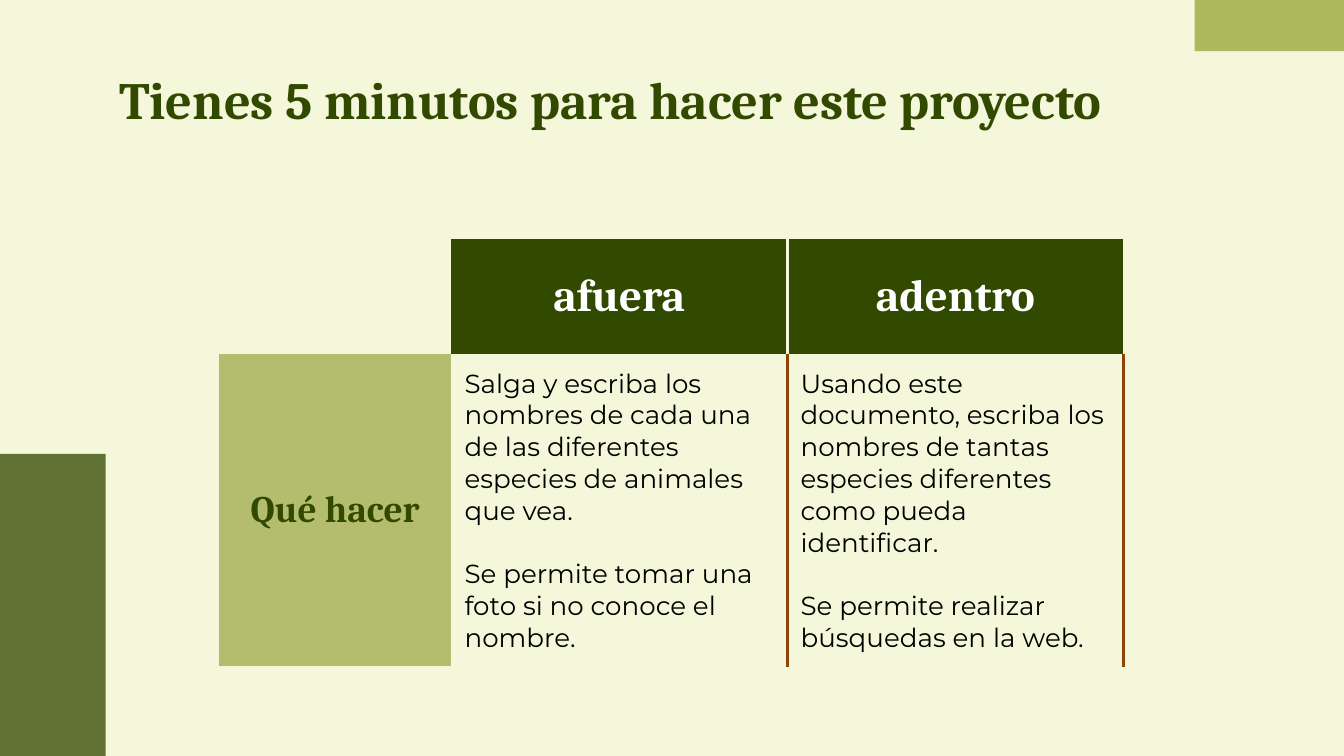
from lxml import etree
from pptx import Presentation
from pptx.dml.color import RGBColor
from pptx.enum import shapes, text
from pptx.oxml import ns
from pptx.util import Cm, Pt

CREAM, DARK, OLIVE, PALE, BROWN = "F4F7DA", "324A00", "7C8C03", "B4BD6E", "8C4303"
HEADING, BODY = "Cambria", "Montserrat"
NO_STYLE = "{2D5ABB26-0587-4C30-8999-92F81FD0307C}"


def paint(target, color):
    """Give a fill or a font colour its hex value."""
    if hasattr(target, "solid"):
        target.solid()
        target = target.fore_color
    target.rgb = RGBColor.from_string(color)


def set_font(paragraph, name, size, color, bold):
    font = paragraph.font
    font.name, font.size, font.bold = name, Pt(size), bold
    paint(font.color, color)


def add_block(slide, box, color, opacity):
    block = slide.shapes.add_shape(shapes.MSO_SHAPE.RECTANGLE, *map(Cm, box))
    block.shadow.inherit = False
    block.line.fill.background()
    paint(block.fill, color)
    fill_color = block.fill._xPr.find(".//" + ns.qn("a:srgbClr"))
    etree.SubElement(fill_color, ns.qn("a:alpha"), val=str(opacity * 1000))


def add_title(slide, box, wording):
    title = slide.shapes.title
    title.left, title.top, title.width, title.height = map(Cm, box)
    frame = title.text_frame
    frame.margin_left = frame.margin_right = frame.margin_top = frame.margin_bottom = Cm(0.25)
    frame.vertical_anchor = text.MSO_ANCHOR.TOP
    frame.auto_size = text.MSO_AUTO_SIZE.NONE
    frame.text = wording
    heading = frame.paragraphs[0]
    heading.alignment = text.PP_ALIGN.LEFT
    set_font(heading, HEADING, 28, DARK, True)


def add_borders(cell, borders):
    """Draw the sides named in borders, in schema order, and hide the others."""
    props = cell._tc.get_or_add_tcPr()
    for side in "LRTB":
        line = etree.SubElement(props, ns.qn(f"a:ln{side}"), w=str(Pt(1.5)))
        if side in borders:
            fill = etree.SubElement(line, ns.qn("a:solidFill"))
            etree.SubElement(fill, ns.qn("a:srgbClr"), val=borders[side])
        else:
            etree.SubElement(line, ns.qn("a:noFill"))


def fill_cell(cell, wording, font, fill=None, borders=(), centered=True):
    cell.margin_left = cell.margin_right = cell.margin_top = cell.margin_bottom = Cm(0.25)
    cell.vertical_anchor = text.MSO_ANCHOR.MIDDLE
    add_borders(cell, borders)
    if fill:
        paint(cell.fill, fill)
    else:
        cell.fill.background()
    cell.text = wording
    for index, paragraph in enumerate(cell.text_frame.paragraphs):
        paragraph.alignment = text.PP_ALIGN.CENTER if centered else text.PP_ALIGN.LEFT
        if index:
            paragraph.space_before = Pt(17)
        set_font(paragraph, *font)


def add_instructions(slide, box, row_label, columns):
    table = slide.shapes.add_table(2, 3, *map(Cm, box)).table
    table.first_row = table.horz_banding = False
    table._tbl.tblPr.find(ns.qn("a:tableStyleId")).text = NO_STYLE
    for column, width in zip(table.columns, (4.39, 6.35, 6.35)):
        column.width = Cm(width)
    for row, height in zip(table.rows, (2.18, box[3] - 2.18)):
        row.height = Cm(height)

    # Row label
    fill_cell(table.cell(0, 0), "", (BODY, 14, "000000", False))
    fill_cell(table.cell(1, 0), row_label, (HEADING, 20, DARK, True), PALE, {"B": CREAM})

    # One column for each place
    rules = (({"R": CREAM}, {"R": BROWN}), ({"L": CREAM}, {"L": BROWN, "R": BROWN}))
    for number, ((place, task), (top, bottom)) in enumerate(zip(columns, rules), 1):
        fill_cell(table.cell(0, number), place, (HEADING, 24, "FFFFFF", True), DARK, top)
        fill_cell(table.cell(1, number), task, (BODY, 14, "000000", False),
                  borders=bottom, centered=False)


def main():
    deck = Presentation()
    deck.slide_width, deck.slide_height = Cm(25.4), Cm(14.29)
    slide = deck.slides.add_slide(deck.slide_layouts[5])
    paint(slide.background.fill, CREAM)

    # Corner blocks
    add_block(slide, (0, 8.58, 2, 5.71), DARK, 76)
    add_block(slide, (22.58, 0, 2.82, 0.97), OLIVE, 58)

    add_title(slide, (2, 1.02, 21.4, 1.6), "Tienes 5 minutos para hacer este proyecto")
    add_instructions(slide, (4.14, 4.52, 17.09, 8.05), "Qué hacer", (
        ("afuera",
         "Salga y escriba los nombres de cada una de las diferentes especies de animales que vea.\n"
         "Se permite tomar una foto si no conoce el nombre."),
        ("adentro",
         "Usando este documento, escriba los nombres de tantas especies diferentes como pueda "
         "identificar.\nSe permite realizar búsquedas en la web."),
    ))
    deck.save("out.pptx")


if __name__ == "__main__":
    main()
